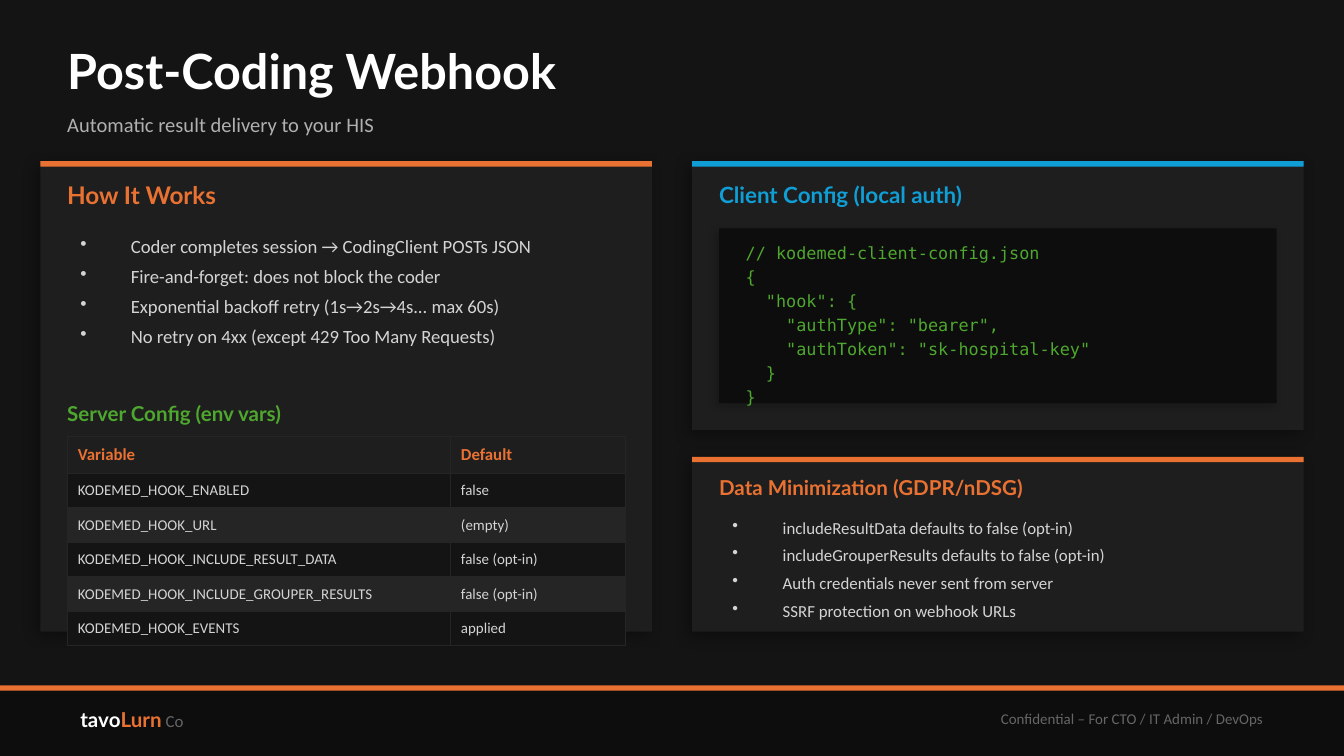
from lxml.etree import SubElement
from pptx import Presentation
from pptx.dml.color import RGBColor
from pptx.enum.shapes import MSO_SHAPE
from pptx.enum.text import MSO_ANCHOR, MSO_AUTO_SIZE, PP_ALIGN
from pptx.oxml import parse_xml
from pptx.oxml.ns import nsdecls, qn
from pptx.util import Pt

PX = 4572
COLORS = {
    "bg": "141414", "panel": "1E1E1E", "deep": "0D0D0D", "stripe": "252525",
    "orange": "E97132", "blue": "0F9ED5", "green": "4EA72E",
    "white": "FFFFFF", "body": "D4D4D4", "soft": "B0B0B0", "dim": "666666",
}


def rgb(name):
    return RGBColor.from_string(COLORS[name])


def fmt(size, color, name="Calibri", bold=False):
    return {"size": Pt(size), "name": name, "bold": bold, "color": color}


class Deck:
    def __init__(self, width, height):
        self.prs = Presentation()
        self.prs.slide_width, self.prs.slide_height = width * PX, height * PX
        self.s = self.prs.slides.add_slide(self.prs.slide_layouts[5])
        self.s.background.fill.solid()
        self.s.background.fill.fore_color.rgb = rgb("bg")

    def run(self, p, text, style):
        r = p.add_run()
        r.text = text
        for key, value in style.items():
            if key == "color":
                r.font.color.rgb = rgb(value)
            else:
                setattr(r.font, key, value)

    def rect(self, x, y, w, h, color, shadow=None):
        sp = self.s.shapes.add_shape(MSO_SHAPE.RECTANGLE, *[v * PX for v in (x, y, w, h)])
        sp.shadow.inherit = False
        sp.fill.solid()
        sp.fill.fore_color.rgb = rgb(color)
        sp.line.fill.background()
        if shadow:
            alpha, blur, dist = shadow
            effects = sp._element.spPr.find(qn("a:effectLst"))
            effects.append(parse_xml(
                f'<a:outerShdw {nsdecls("a")} blurRad="{Pt(blur)}" dist="{Pt(dist)}" '
                f'dir="{135 * 60000}" algn="bl" rotWithShape="0"><a:srgbClr val="000000">'
                f'<a:alpha val="{alpha * 1000}"/></a:srgbClr></a:outerShdw>'))

    def frame(self, tf, anchor, inset):
        values = {"word_wrap": True, "auto_size": MSO_AUTO_SIZE.NONE, "vertical_anchor": anchor}
        if inset is not None:
            values |= {f"margin_{side}": inset for side in ("left", "top", "right", "bottom")}
        for key, value in values.items():
            setattr(tf, key, value)

    def text(self, x, y, w, h, runs, inset=0, align=PP_ALIGN.LEFT):
        sp = self.s.shapes.add_textbox(x * PX, y * PX, w * PX, h * PX)
        self.frame(sp.text_frame, MSO_ANCHOR.MIDDLE, inset)
        p = sp.text_frame.paragraphs[0]
        p.alignment = align
        for text, style in runs:
            self.run(p, text, style)

    def title(self, x, y, w, h, text, style):
        sp = self.s.shapes.title
        for key, value in {"left": x, "top": y, "width": w, "height": h}.items():
            setattr(sp, key, value * PX)
        self.frame(sp.text_frame, MSO_ANCHOR.MIDDLE, 0)
        p = sp.text_frame.paragraphs[0]
        p.alignment = PP_ALIGN.LEFT
        self.run(p, text, style)

    def lines(self, x, y, w, h, items, style, after, bullet=False):
        sp = self.s.shapes.add_textbox(x * PX, y * PX, w * PX, h * PX)
        tf = sp.text_frame
        self.frame(tf, MSO_ANCHOR.TOP, None)
        for i, item in enumerate(items):
            p = tf.add_paragraph() if i else tf.paragraphs[0]
            p.space_after = Pt(after)
            if bullet:
                pPr = p._p.get_or_add_pPr()
                pPr.set("marL", str(75 * PX))
                pPr.set("indent", str(-75 * PX))
                SubElement(pPr, qn("a:buChar"), char="•")
            self.run(p, item, style)

    def panel(self, x, y, w, h, color, heading, size, heading_h):
        self.rect(x, y, w, h, "panel", (35, 8, 3))
        self.rect(x, y, w, 8, color)
        self.text(x + 40, y + 20, w - 80, heading_h, [(heading, fmt(size, color, "Lato", True))])

    def border(self, cell):
        tcPr = cell._tc.get_or_add_tcPr()
        for side in "LRTB":
            tcPr.append(parse_xml(
                f'<a:ln{side} {nsdecls("a")} w="{Pt(0.5)}"><a:solidFill>'
                f'<a:srgbClr val="{COLORS["stripe"]}"/></a:solidFill></a:ln{side}>'))

    def table(self, x, y, widths, h, rows):
        gf = self.s.shapes.add_table(len(rows), len(widths), x * PX, y * PX, sum(widths) * PX, h * PX)
        for column, width in zip(gf.table.columns, widths):
            column.width = width * PX
        for i, row in enumerate(rows):
            fill = "panel" if i == 0 else ("stripe", "bg")[i % 2]
            style = fmt(8, "body") if i else fmt(9, "orange", bold=True)
            for j, text in enumerate(row):
                cell = gf.table.cell(i, j)
                self.border(cell)
                values = {"margin_left": 16 * PX, "margin_right": 16 * PX, "margin_top": 12 * PX,
                          "margin_bottom": 12 * PX, "vertical_anchor": MSO_ANCHOR.MIDDLE}
                for key, value in values.items():
                    setattr(cell, key, value)
                cell.fill.solid()
                cell.fill.fore_color.rgb = rgb(fill)
                self.run(cell.text_frame.paragraphs[0], text, style)


def main():
    d = Deck(2000, 1125)

    d.rect(0, 1020, 2000, 105, "deep")
    d.rect(0, 1020, 2000, 8, "orange")
    d.text(100, 1030, 600, 80, [
        ("tavo", fmt(11, "white", "Lato", True)),
        ("Lurn", fmt(11, "orange", "Lato", True)),
        (" Co", fmt(9, "dim")),
    ], inset=None)
    d.text(1100, 1030, 800, 80, [("Confidential – For CTO / IT Admin / DevOps", fmt(8, "dim"))],
           inset=None, align=PP_ALIGN.RIGHT)

    d.title(100, 50, 1800, 110, "Post-Coding Webhook", fmt(26, "white", "Lato", True))
    d.text(100, 150, 1800, 70, [("Automatic result delivery to your HIS", fmt(11, "soft"))])

    d.panel(60, 240, 910, 700, "orange", "How It Works", 13, 60)
    d.lines(100, 340, 830, 240, [
        "Coder completes session → CodingClient POSTs JSON",
        "Fire-and-forget: does not block the coder",
        "Exponential backoff retry (1s→2s→4s... max 60s)",
        "No retry on 4xx (except 429 Too Many Requests)",
    ], fmt(10, "body"), 4, bullet=True)
    d.text(100, 590, 830, 50, [("Server Config (env vars)", fmt(11, "green", "Lato", True))])
    d.table(100, 650, [570, 260], 200, [
        ("Variable", "Default"),
        ("KODEMED_HOOK_ENABLED", "false"),
        ("KODEMED_HOOK_URL", "(empty)"),
        ("KODEMED_HOOK_INCLUDE_RESULT_DATA", "false (opt-in)"),
        ("KODEMED_HOOK_INCLUDE_GROUPER_RESULTS", "false (opt-in)"),
        ("KODEMED_HOOK_EVENTS", "applied"),
    ])

    d.panel(1030, 240, 910, 400, "blue", "Client Config (local auth)", 12, 60)
    d.rect(1070, 340, 830, 260, "deep", (20, 4, 2))
    d.lines(1090, 352, 790, 236, [
        "// kodemed-client-config.json",
        "{",
        '  "hook": {',
        '    "authType": "bearer",',
        '    "authToken": "sk-hospital-key"',
        "  }",
        "}",
    ], fmt(9, "green", "DejaVu Sans Mono"), 2)

    d.panel(1030, 680, 910, 260, "orange", "Data Minimization (GDPR/nDSG)", 11, 50)
    d.lines(1070, 760, 830, 160, [
        "includeResultData defaults to false (opt-in)",
        "includeGrouperResults defaults to false (opt-in)",
        "Auth credentials never sent from server",
        "SSRF protection on webhook URLs",
    ], fmt(9, "body"), 4, bullet=True)

    d.prs.save("out.pptx")


if __name__ == "__main__":
    main()
